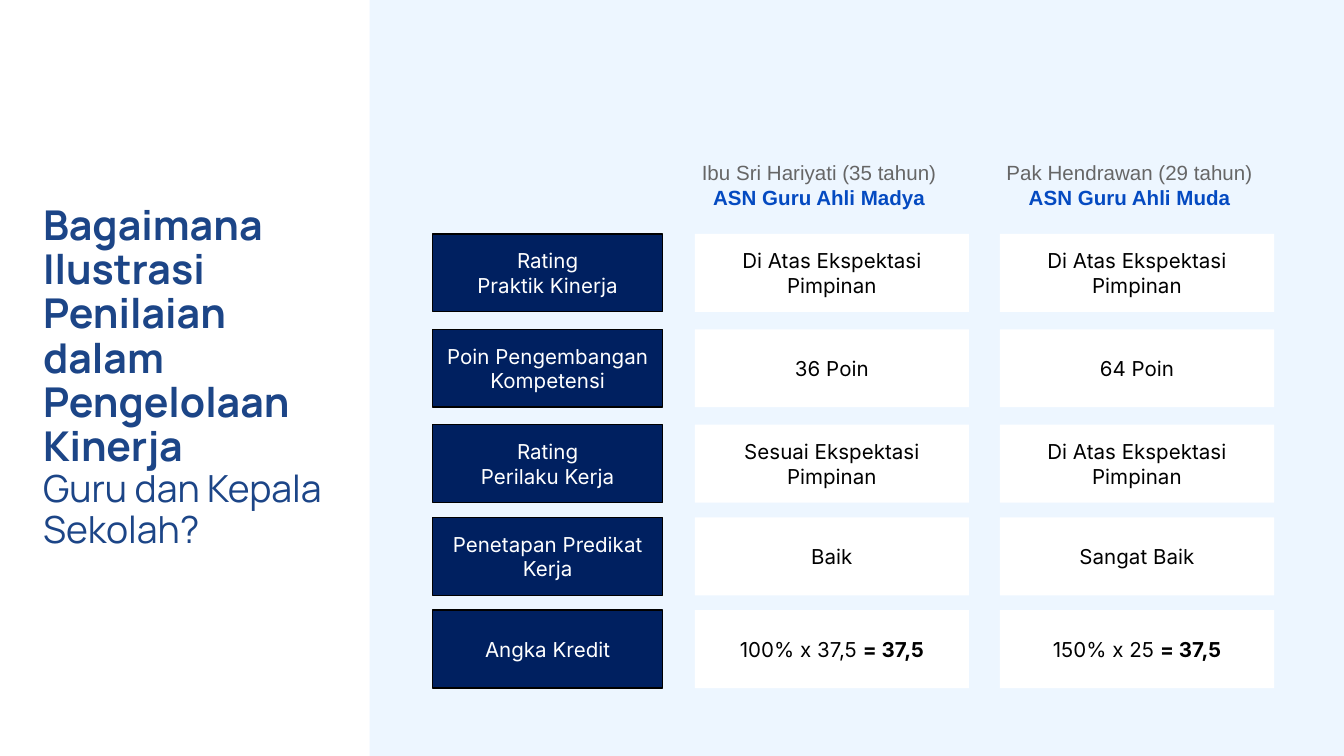
from copy import deepcopy

from pptx import Presentation
from pptx.dml.color import RGBColor
from pptx.enum.shapes import MSO_SHAPE as Shape
from pptx.enum.text import MSO_ANCHOR as Anchor, PP_ALIGN as Align
from pptx.util import Inches, Pt

SLIDE_WIDTH = 10
SLIDE_HEIGHT = SLIDE_WIDTH * 9 / 16
COLORS = {
    "background": "EDF6FF",
    "white": "FFFFFF",
    "black": "000000",
    "navy": "002060",
    "title": "1C4587",
    "name": "666666",
    "position": "044AC1",
}

TEACHERS = [
    ("Ibu Sri Hariyati (35 tahun)", "ASN Guru Ahli Madya"),
    ("Pak Hendrawan (29 tahun)", "ASN Guru Ahli Muda"),
]
# Each row: label lines, then one (plain, bold) pair per teacher.
ROWS = [
    (["Rating", "Praktik Kinerja"],
     [("Di Atas Ekspektasi Pimpinan", ""), ("Di Atas Ekspektasi Pimpinan", "")]),
    (["Poin Pengembangan Kompetensi"], [("36 Poin", ""), ("64 Poin", "")]),
    (["Rating", "Perilaku Kerja"],
     [("Sesuai Ekspektasi Pimpinan", ""), ("Di Atas Ekspektasi Pimpinan", "")]),
    (["Penetapan Predikat Kerja"], [("Baik", ""), ("Sangat Baik", "")]),
    (["Angka Kredit"], [("100% x 37,5 ", "= 37,5"), ("150% x 25 ", "= 37,5")]),
]
ROW_OFFSETS = [0, 0.71, 1.42, 2.11, 2.8]
ROW_HEIGHT = 0.58
LABEL_WIDTH = 1.71
VALUE_OFFSETS = [1.95, 4.22]
VALUE_WIDTH = 2.04
# Left, top, width and height, relative to the grid.
HEADER_BOXES = [(1.8, -0.65, 2.15, 0.57), (4.11, -0.67, 2.15, 0.61)]


def color(name):
    return RGBColor.from_string(COLORS[name])


def add_break(paragraph, run):
    """Add a line break with the same format as the run before it."""
    paragraph.add_line_break()
    paragraph._p[-1].append(deepcopy(run._r.rPr))


def write_text(shape, paragraphs, font="Inter", size=11, fill="black",
               align=Align.CENTER, spacing=None, margins=(0.1, 0.1)):
    """Fill a shape with paragraphs, each a list of (text, overrides) runs."""
    frame = shape.text_frame
    frame.word_wrap = True
    frame.vertical_anchor = Anchor.MIDDLE
    frame.margin_left = frame.margin_right = Inches(margins[0])
    frame.margin_top = frame.margin_bottom = Inches(margins[1])
    for index, runs in enumerate(paragraphs):
        paragraph = frame.add_paragraph() if index else frame.paragraphs[0]
        paragraph.alignment = align
        if spacing:
            paragraph.line_spacing = spacing
        for text, style in runs:
            run = paragraph.add_run()
            run.text = text
            run.font.name = font
            run.font.size = Pt(style.get("size", size))
            run.font.bold = style.get("bold", False)
            run.font.color.rgb = color(style.get("fill", fill))
            if style.get("line_break"):
                add_break(paragraph, run)


def add_rectangle(slide, box, fill, line=None):
    shape = slide.shapes.add_shape(Shape.RECTANGLE, *map(Inches, box))
    shape.shadow.inherit = False
    shape.fill.solid()
    shape.fill.fore_color.rgb = color(fill)
    if line:
        shape.line.color.rgb = color(line)
        shape.line.width = Pt(0.75)
    else:
        shape.line.fill.background()
    return shape


def add_text(slide, box, paragraphs, **style):
    textbox = slide.shapes.add_textbox(*map(Inches, box))
    write_text(textbox, paragraphs, **style)


def add_title_panel(slide, left, top, width, height):
    add_rectangle(slide, (left, top, width, height), "white")
    add_text(
        slide, (left + 0.25, top + 0.54, width - 0.33, height - 1.08),
        [[("Bagaimana Ilustrasi Penilaian dalam Pengelolaan Kinerja",
           {"bold": True})],
         [("Guru dan Kepala Sekolah?", {"size": 20})]],
        font="Manrope", size=22, fill="title", align=Align.LEFT,
        spacing=0.9, margins=(0.07, 0.04))


def add_headers(slide, left, top):
    for (name, position), (x, y, width, height) in zip(TEACHERS, HEADER_BOXES):
        add_text(slide, (left + x, top + y, width, height),
                 [[(name, {"line_break": True}),
                   (position, {"bold": True, "fill": "position"})]],
                 font="Arial", fill="name")


def add_rating_grid(slide, left, top):
    add_headers(slide, left, top)
    for (label_lines, values), offset in zip(ROWS, ROW_OFFSETS):
        row_top = top + offset
        label = add_rectangle(slide, (left, row_top, LABEL_WIDTH, ROW_HEIGHT),
                              "navy", line="black")
        write_text(label, [[(line, {})] for line in label_lines], fill="white")
        for (plain, bold), x in zip(values, VALUE_OFFSETS):
            cell = add_rectangle(
                slide, (left + x, row_top, VALUE_WIDTH, ROW_HEIGHT), "white")
            runs = [(plain, {})]
            if bold:
                runs.append((bold, {"bold": True}))
            write_text(cell, [runs])


def main():
    presentation = Presentation()
    presentation.slide_width = Inches(SLIDE_WIDTH)
    presentation.slide_height = Inches(SLIDE_HEIGHT)
    slide = presentation.slides.add_slide(presentation.slide_layouts[6])
    slide.background.fill.solid()
    slide.background.fill.fore_color.rgb = color("background")
    add_title_panel(slide, 0, 0, 2.75, SLIDE_HEIGHT)
    add_rating_grid(slide, 3.22, 1.74)
    presentation.save("out.pptx")


if __name__ == "__main__":
    main()
